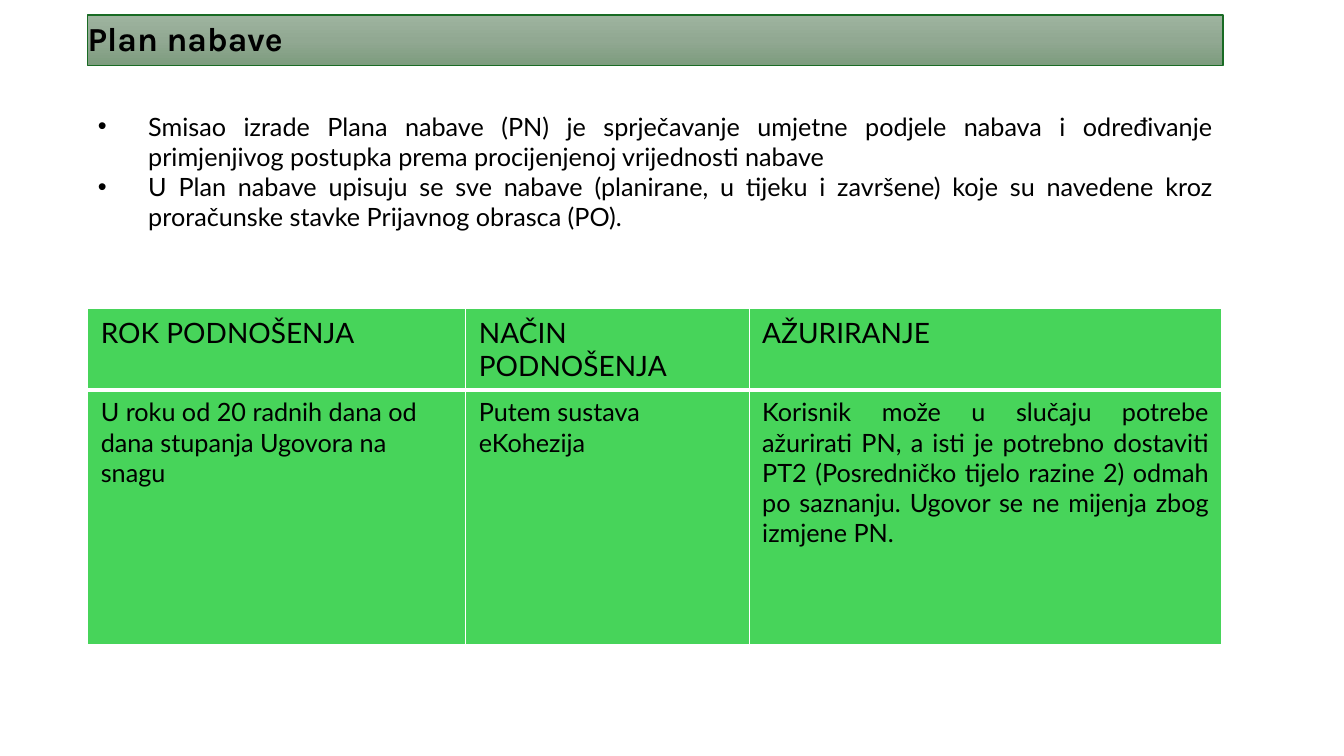
import copy
import lxml.etree
import pptx
import pptx.dml.color
import pptx.enum.text
import pptx.oxml.ns
import pptx.util

Inches = pptx.util.Inches
Pt = pptx.util.Pt
Align = pptx.enum.text.PP_ALIGN
qn = pptx.oxml.ns.qn

COLORS = {
    "text": "000000",
    "title_top": "9EB49F",
    "title_middle": "91A892",
    "title_bottom": "7D9C7E",
    "title_line": "196B24",
    "cell": "47D45A",
    "border": "FFFFFF",
}
LEFT, WIDTH = Inches(0.87), Inches(11.26)


def rgb(name):
    return pptx.dml.color.RGBColor.from_string(COLORS[name])


def add_text(paragraph, text, size, font="Lato", bold=False):
    run = paragraph.add_run()
    run.text = text
    run.font.name = font
    run.font.size = Pt(size)
    run.font.bold = bold
    run.font.color.rgb = rgb("text")


presentation = pptx.Presentation()
presentation.slide_width = Inches(13.33)
presentation.slide_height = Inches(7.5)
slide = presentation.slides.add_slide(presentation.slide_layouts[1])

title = slide.shapes.title
title.left, title.top, title.width, title.height = LEFT, Inches(0.15), WIDTH, Inches(0.5)
title.fill.gradient()
title.fill.gradient_angle = 270
stop_list = title._element.spPr.find(qn("a:gradFill")).find(qn("a:gsLst"))
stop_list.insert(1, copy.deepcopy(stop_list[0]))
title_stops = zip(title.fill.gradient_stops, ["title_top", "title_middle", "title_bottom"], [0, 0.5, 1])
for stop, color, position in title_stops:
    stop.color.rgb = rgb(color)
    stop.position = position
title.line.color.rgb = rgb("title_line")
title.line.width = Pt(1)
frame = title.text_frame
frame.margin_left = frame.margin_right = frame.margin_top = frame.margin_bottom = 0
frame.vertical_anchor = pptx.enum.text.MSO_ANCHOR.MIDDLE
frame.auto_size = pptx.enum.text.MSO_AUTO_SIZE.NONE
frame.paragraphs[0].alignment = Align.LEFT
frame.paragraphs[0].line_spacing = 0.9
add_text(frame.paragraphs[0], "Plan nabave", 24, "Karla", True)

points = [
    "Smisao izrade Plana nabave (PN) je sprječavanje umjetne podjele nabava i određivanje "
    "primjenjivog postupka prema procijenjenoj vrijednosti nabave",
    "U Plan nabave upisuju se sve nabave (planirane, u tijeku i završene) koje su navedene kroz "
    "proračunske stavke Prijavnog obrasca (PO).",
]
body = slide.placeholders[1]
body.left, body.top, body.width, body.height = LEFT, Inches(1.05), WIDTH, Inches(1.31)
frame = body.text_frame
frame.auto_size = pptx.enum.text.MSO_AUTO_SIZE.NONE
for index, point in enumerate(points):
    paragraph = frame.add_paragraph() if index else frame.paragraphs[0]
    properties = paragraph._p.get_or_add_pPr()
    properties.set("marL", str(Inches(0.5)))
    properties.set("indent", str(-Inches(0.5)))
    lxml.etree.SubElement(properties, qn("a:buFont"), typeface="Arial")
    lxml.etree.SubElement(properties, qn("a:buChar"), char="•")
    paragraph.alignment = Align.JUSTIFY
    paragraph.space_before = Pt(0)
    add_text(paragraph, point, 18)

rows = [
    ["ROK PODNOŠENJA", "NAČIN PODNOŠENJA", "AŽURIRANJE"],
    [
        "U roku od 20 radnih dana od dana stupanja Ugovora na snagu",
        "Putem sustava eKohezija",
        "Korisnik može u slučaju potrebe ažurirati PN, a isti je potrebno dostaviti PT2 "
        "(Posredničko tijelo razine 2) odmah po saznanju. Ugovor se ne mijenja zbog izmjene PN.",
    ],
]
table = slide.shapes.add_table(2, 3, LEFT, Inches(3.06), WIDTH, Inches(3.33)).table
table.first_row = False
table.horz_banding = False
for column, width in zip(table.columns, [3.75, 2.81, 4.69]):
    column.width = Inches(width)
for row, height in zip(table.rows, [0.8, 2.53]):
    row.height = Inches(height)

for row_index, texts in enumerate(rows):
    for column_index, text in enumerate(texts):
        cell = table.cell(row_index, column_index)
        cell.margin_left = cell.margin_right = Inches(0.13)
        cell.margin_top = cell.margin_bottom = Inches(0.07)
        properties = cell._tc.get_or_add_tcPr()
        for side in ["lnL", "lnR", "lnT", "lnB"]:
            points_wide = 3 if side == "lnB" and row_index == 0 else 1
            border = lxml.etree.SubElement(properties, qn("a:" + side), w=str(Pt(points_wide)))
            fill = lxml.etree.SubElement(border, qn("a:solidFill"))
            lxml.etree.SubElement(fill, qn("a:srgbClr"), val=COLORS["border"])
        cell.fill.solid()
        cell.fill.fore_color.rgb = rgb("cell")
        paragraph = cell.text_frame.paragraphs[0]
        add_text(paragraph, text, 18 if row_index else 20)
table.cell(1, 2).text_frame.paragraphs[0].alignment = Align.JUSTIFY

presentation.save("out.pptx")
